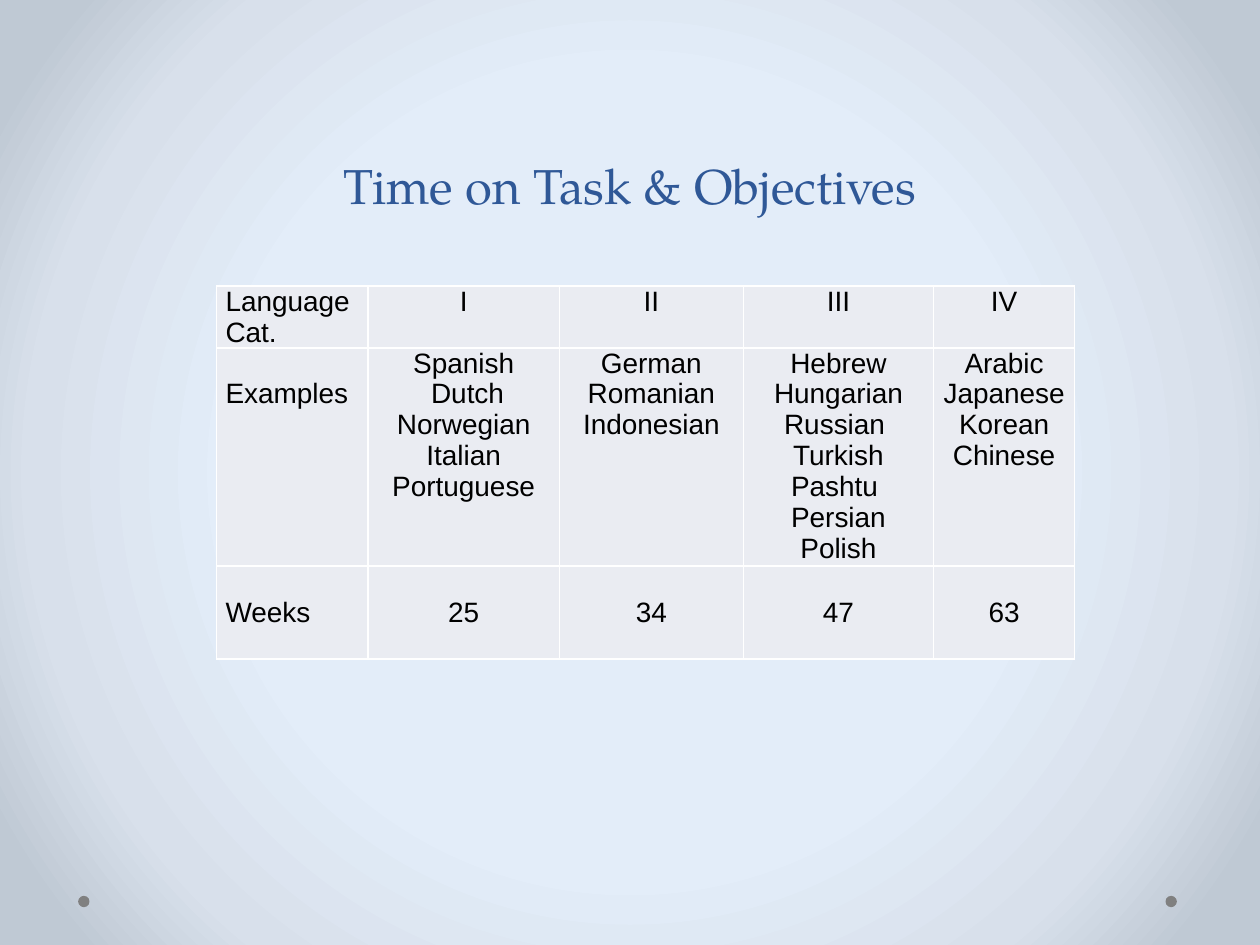
import pptx
import pptx.util
import pptx.dml.color
import pptx.enum.shapes
import pptx.enum.text
import pptx.oxml
import pptx.oxml.ns

Inches, Pt = pptx.util.Inches, pptx.util.Pt
ALIGN, ANCHOR = pptx.enum.text.PP_ALIGN, pptx.enum.text.MSO_ANCHOR

TITLE = "Time on Task & Objectives"
ROWS = [
    ["Language Cat.", "I", "II", "III", "IV"],
    [
        "Examples",
        "Spanish\n Dutch Norwegian\nItalian\nPortuguese",
        "German Romanian Indonesian",
        "Hebrew\nHungarian\nRussian \nTurkish\nPashtu \nPersian\nPolish",
        "Arabic\nJapanese Korean Chinese",
    ],
    ["Weeks", "25", "34", "47", "63"],
]
WIDTHS = [1.2, 1.52, 1.46, 1.51, 1.12]
HEIGHTS = [0.49, 1.73, 0.74]
LINE = 17.7
DOTS = [0.62, 9.25]
COLORS = {"title": "2F5897", "text": "000000", "cell": "EAECF2",
          "edge": "FFFFFF", "dot": "808080"}
GLOW = [(50, "E3EDF9"), (76, "D8E0EB"), (92, "BFC9D4")]
NS = pptx.oxml.ns.nsdecls("a")


def rgb(name):
    return pptx.dml.color.RGBColor.from_string(COLORS[name])


def style(para, font, size, color, align, line):
    para.alignment = align
    para.line_spacing = Pt(line)
    for run in para.runs:
        run.font.name = font
        run.font.size = Pt(size)
        run.font.bold = False
        run.font.color.rgb = rgb(color)


def paint(slide):
    """Give the slide a round gradient that darkens to the corners."""
    slide.background.fill.gradient()
    old = slide.element.xpath(".//p:bgPr/a:gradFill")[0]
    stops = "".join(
        f'<a:gs pos="{pos * 1000}"><a:srgbClr val="{color}"/></a:gs>'
        for pos, color in GLOW)
    new = pptx.oxml.parse_xml(
        f'<a:gradFill {NS} rotWithShape="1"><a:gsLst>{stops}</a:gsLst>'
        '<a:path path="circle"><a:fillToRect l="50000" t="50000" '
        'r="50000" b="50000"/></a:path></a:gradFill>')
    old.getparent().replace(old, new)


def edge(cell):
    props = cell._tc.get_or_add_tcPr()
    for spot, side in enumerate("LRTB"):
        props.insert(spot, pptx.oxml.parse_xml(
            f'<a:ln{side} {NS} w="12700"><a:solidFill>'
            f'<a:srgbClr val="{COLORS["edge"]}"/></a:solidFill></a:ln{side}>'))


def fill_cell(cell, text, row, col):
    cell.text_frame.text = text
    cell.margin_left = cell.margin_right = Inches(0.07)
    cell.margin_top = cell.margin_bottom = 0
    if text == "Examples":
        cell.margin_top = Pt(LINE)
    cell.vertical_anchor = ANCHOR.MIDDLE if row == 2 else ANCHOR.TOP
    cell.fill.solid()
    cell.fill.fore_color.rgb = rgb("cell")
    edge(cell)
    for para in cell.text_frame.paragraphs:
        style(para, "Arial", 16, "text",
              ALIGN.CENTER if col else ALIGN.LEFT, LINE)


def add_grid(slide):
    table = slide.shapes.add_table(
        len(ROWS), len(WIDTHS), Inches(1.72), Inches(2.27),
        Inches(sum(WIDTHS)), Inches(sum(HEIGHTS))).table
    for col, width in enumerate(WIDTHS):
        table.columns[col].width = Inches(width)
    for row, height in enumerate(HEIGHTS):
        table.rows[row].height = Inches(height)
        for col, text in enumerate(ROWS[row]):
            fill_cell(table.cell(row, col), text, row, col)


def main():
    deck = pptx.Presentation()
    deck.slide_width, deck.slide_height = Inches(10), Inches(7.5)
    slide = deck.slides.add_slide(deck.slide_layouts[5])
    paint(slide)

    for left in DOTS:
        dot = slide.shapes.add_shape(
            pptx.enum.shapes.MSO_SHAPE.OVAL, Inches(left), Inches(7.11),
            Inches(0.09), Inches(0.09))
        dot.shadow.inherit = False
        dot.fill.solid()
        dot.fill.fore_color.rgb = rgb("dot")
        dot.line.fill.background()

    add_grid(slide)

    title = slide.shapes.title
    title.left, title.top = Inches(0.5), Inches(0)
    title.width, title.height = Inches(9), Inches(1.75)
    title.text_frame.text = TITLE
    title.text_frame.vertical_anchor = ANCHOR.BOTTOM
    style(title.text_frame.paragraphs[0], "TeX Gyre Pagella", 28, "title",
          ALIGN.CENTER, 58)

    deck.save("out.pptx")


if __name__ == "__main__":
    main()
